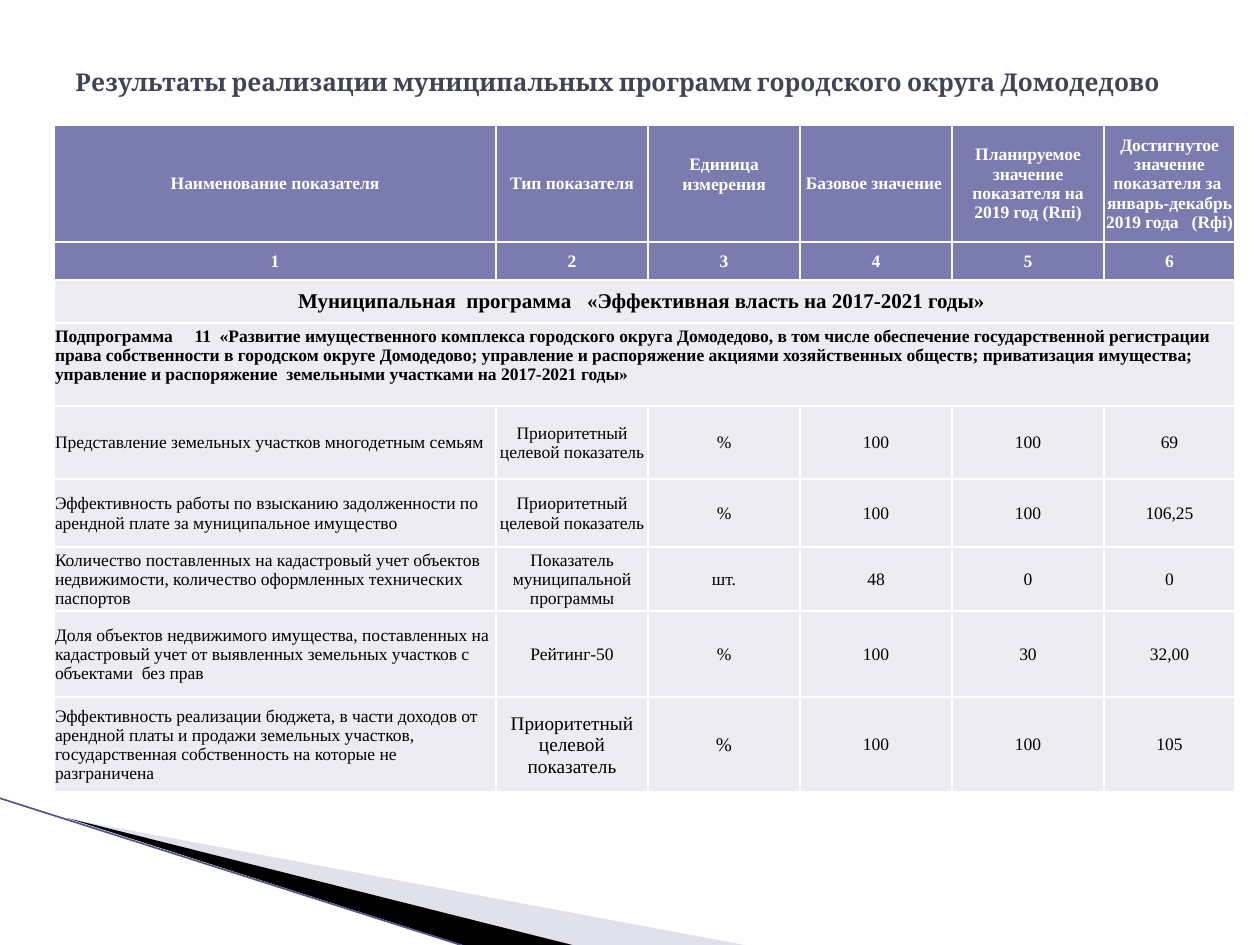
from dataclasses import dataclass

from lxml.etree import SubElement
from pptx import Presentation
from pptx.dml.color import RGBColor
from pptx.enum.shapes import MSO_CONNECTOR as Connector
from pptx.enum.text import MSO_ANCHOR as Anchor, PP_ALIGN as Align
from pptx.oxml.ns import qn
from pptx.util import Emu, Pt

EMU_PER_PX = 914400 / 126
SLIDE_SIZE = (1260, 945)
COLUMN_WIDTHS = [442, 152, 152, 152, 152, 131]
ROW_HEIGHTS = [117, 38, 43, 79, 73, 68, 60, 86, 95]
LINE_HEIGHT = 19

TITLE = "Результаты реализации муниципальных программ городского округа Домодедово"
HEADERS = [
    "Наименование показателя", "Тип показателя", "Единица измерения", "Базовое значение ",
    "Планируемое значение показателя на 2019 год (Rпi)",
    "Достигнутое значение показателя за  январь-декабрь 2019 года   (Rфi)",
]
PROGRAM = "Муниципальная  программа   «Эффективная власть на 2017-2021 годы» "
SUBPROGRAM = (
    "Подпрограмма     11  «Развитие имущественного комплекса городского округа Домодедово, "
    "в том числе обеспечение государственной регистрации права собственности в городском "
    "округе Домодедово; управление и распоряжение акциями хозяйственных обществ; приватизация "
    "имущества; управление и распоряжение  земельными участками на 2017-2021 годы»"
)
PRIORITY = "Приоритетный целевой показатель"
INDICATORS = [
    ["Представление земельных участков многодетным семьям", PRIORITY, "%", "100", "100", "69"],
    ["Эффективность работы по взысканию задолженности по арендной плате за муниципальное "
     "имущество", PRIORITY, "%", "100", "100", "106,25"],
    ["Количество поставленных на кадастровый учет объектов недвижимости, количество "
     "оформленных технических паспортов",
     "Показатель муниципальной программы", "шт.", "48", "0", "0"],
    ["Доля объектов недвижимого имущества, поставленных на кадастровый учет от выявленных "
     "земельных участков с объектами  без прав", "Рейтинг-50", "%", "100", "30", "32,00"],
    ["Эффективность реализации бюджета, в части доходов от арендной платы и продажи земельных "
     "участков, государственная собственность на которые не разграничена",
     PRIORITY, "%", "100", "100", "105"],
]


@dataclass(frozen=True)
class Theme:
    title_font: str = "Cambria"
    table_font: str = "Times New Roman"
    title_color: str = "424456"
    header_fill: str = "7A7BAE"
    body_fill: str = "ECECF2"
    white: str = "FFFFFF"
    black: str = "000000"
    wedge: str = "B6B6D1"
    edge: str = "53548A"
    title_size: int = 14
    program_size: int = 12
    large_size: int = 11
    table_size: int = 10


def px(length):
    return Emu(round(length * EMU_PER_PX))


def rgb(color):
    return RGBColor.from_string(color)


class SlideBuilder:
    def __init__(self, slide, theme):
        self.slide = slide
        self.theme = theme

    def style(self, paragraph, font, size, color, bold, align):
        paragraph.alignment = align
        paragraph.font.name = font
        paragraph.font.size = Pt(size)
        paragraph.font.bold = bold
        paragraph.font.color.rgb = rgb(color)

    def wedge(self, points, color, opacity=100):
        builder = self.slide.shapes.build_freeform(*points[0], scale=EMU_PER_PX)
        builder.add_line_segments(points[1:], close=True)
        shape = builder.convert_to_shape()
        shape.shadow.inherit = False
        shape.line.fill.background()
        shape.fill.solid()
        shape.fill.fore_color.rgb = rgb(color)
        if opacity < 100:
            color_element = shape.element.spPr.find(qn("a:solidFill"))[0]
            SubElement(color_element, qn("a:alpha"), val=str(opacity * 1000))

    def line(self, start, end, color, width):
        ends = [px(length) for length in (*start, *end)]
        connector = self.slide.shapes.add_connector(Connector.STRAIGHT, *ends)
        connector.line.color.rgb = rgb(color)
        connector.line.width = Pt(width)
        SubElement(connector.element.spPr, qn("a:effectLst"))

    def title(self, text, left, top, width, height):
        box = self.slide.shapes.add_textbox(px(left), px(top), px(width), px(height))
        frame = box.text_frame
        frame.word_wrap = True
        frame.vertical_anchor = Anchor.MIDDLE
        frame.text = text
        self.style(frame.paragraphs[0], self.theme.title_font, self.theme.title_size,
                   self.theme.title_color, True, Align.LEFT)

    def table(self, left, top, widths, heights):
        """Add an empty table without the default banding."""
        table = self.slide.shapes.add_table(
            len(heights), len(widths), px(left), px(top), px(sum(widths)), px(sum(heights))).table
        table.first_row = table.horz_banding = False
        for column, width in zip(table.columns, widths):
            column.width = px(width)
        for row, height in zip(table.rows, heights):
            row.height = px(height)
        for cell in table.iter_cells():
            self.borders(cell)
        return table

    def borders(self, cell):
        properties = cell._tc.get_or_add_tcPr()
        for side in ("lnL", "lnR", "lnT", "lnB"):
            border = SubElement(properties, qn(f"a:{side}"), w=str(Pt(1)))
            fill = SubElement(border, qn("a:solidFill"))
            SubElement(fill, qn("a:srgbClr"), val=self.theme.white)

    def cell(self, cell, text, header=False, bold=False, size=None, align=Align.CENTER):
        theme = self.theme
        cell.text = text
        cell.vertical_anchor = Anchor.MIDDLE
        cell.margin_left = cell.margin_right = cell.margin_top = px(1)
        cell.margin_bottom = 0
        cell.fill.solid()
        cell.fill.fore_color.rgb = rgb(theme.header_fill if header else theme.body_fill)
        self.style(cell.text_frame.paragraphs[0], theme.table_font, size or theme.table_size,
                   theme.white if header else theme.black, header or bold, align)

    def banner(self, table, row, text, **options):
        """Fill one row merged across all columns."""
        first = table.cell(row, 0)
        first.merge(table.cell(row, len(table.columns) - 1))
        self.cell(first, text, bold=True, **options)


def main():
    presentation = Presentation()
    presentation.slide_width, presentation.slide_height = map(px, SLIDE_SIZE)
    slide = presentation.slides.add_slide(presentation.slide_layouts[6])
    theme = Theme()
    builder = SlideBuilder(slide, theme)

    builder.wedge([(69, 819), (750, 946), (575, 946)], theme.wedge, opacity=40)
    builder.wedge([(67, 818), (576, 946), (469, 947)], theme.black)
    builder.line((-1, 798), (467, 947), theme.edge, 0.95)
    builder.title(TITLE, 63, 38, 1134, 87)

    table = builder.table(54, 125, COLUMN_WIDTHS, ROW_HEIGHTS)
    for column, header in enumerate(HEADERS):
        builder.cell(table.cell(0, column), header, header=True)
        builder.cell(table.cell(1, column), str(column + 1), header=True)
    table.cell(0, 2).margin_bottom = px(LINE_HEIGHT)

    builder.banner(table, 2, PROGRAM, size=theme.program_size)
    builder.banner(table, 3, SUBPROGRAM, align=Align.LEFT)
    table.cell(3, 0).margin_bottom = px(LINE_HEIGHT)

    last_row = len(ROW_HEIGHTS) - 1
    for row, values in enumerate(INDICATORS, start=4):
        for column, value in enumerate(values):
            large = row == last_row and column in (1, 2)
            builder.cell(table.cell(row, column), value,
                         size=theme.large_size if large else theme.table_size,
                         align=Align.CENTER if column else Align.LEFT)

    presentation.save("out.pptx")


if __name__ == "__main__":
    main()
